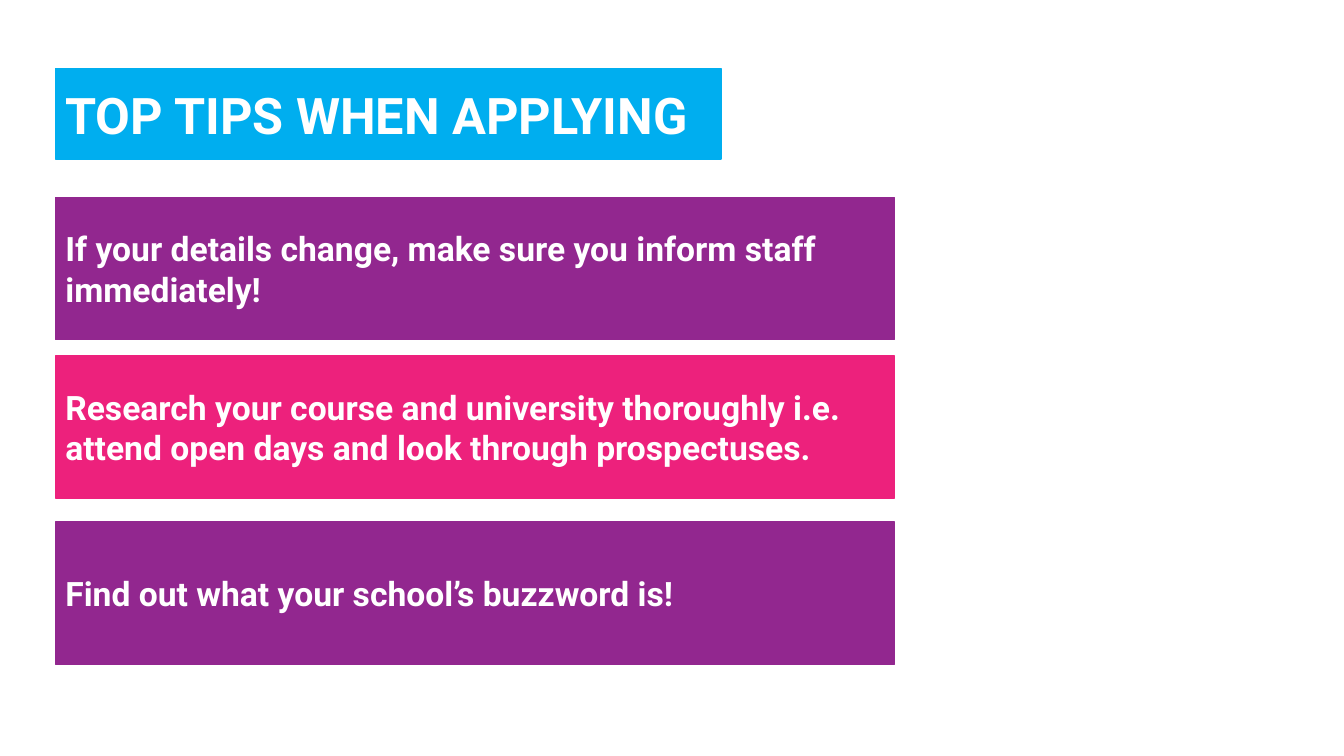
from pptx import Presentation
from pptx import util as u
from pptx.dml.color import RGBColor
from pptx.enum import shapes, text

BLUE = RGBColor(0x00, 0xAE, 0xEF)
PURPLE = RGBColor(0x92, 0x27, 0x8F)
PINK = RGBColor(0xED, 0x21, 0x7C)
WHITE = RGBColor(0xFF, 0xFF, 0xFF)

deck = Presentation()
deck.slide_width = u.Inches(13.33)
deck.slide_height = u.Inches(7.5)
page = deck.slides.add_slide(deck.slide_layouts[6])

LEFT = 0.55
TIP_WIDTH, TIP_HEIGHT = 8.32, 1.41


def add_banner(top, width, height, color, wording, size):
    box = page.shapes.add_shape(
        shapes.MSO_SHAPE.RECTANGLE,
        u.Inches(LEFT), u.Inches(top), u.Inches(width), u.Inches(height))
    box.shadow.inherit = False
    box.fill.solid()
    box.fill.fore_color.rgb = color
    box.line.color.rgb = color
    box.line.width = u.Pt(1)
    frame = box.text_frame
    frame.word_wrap = True
    frame.vertical_anchor = text.MSO_ANCHOR.MIDDLE
    para = frame.paragraphs[0]
    para.text = wording
    para.alignment = text.PP_ALIGN.LEFT
    para.font.name = "Roboto"
    para.font.size = u.Pt(size)
    para.font.bold = True
    para.font.color.rgb = WHITE


# Title banner
add_banner(0.68, 6.6, 0.9, BLUE, "TOP TIPS WHEN APPLYING", 36)

# Tips, one banner each
tips = [
    (1.96, PURPLE, "If your details change, make sure you inform staff immediately!"),
    (3.53, PINK, "Research your course and university thoroughly i.e. "
                 "attend open days and look through prospectuses."),
    (5.18, PURPLE, "Find out what your school’s buzzword is!"),
]
for top, color, wording in tips:
    add_banner(top, TIP_WIDTH, TIP_HEIGHT, color, wording, 24)

deck.save("out.pptx")
